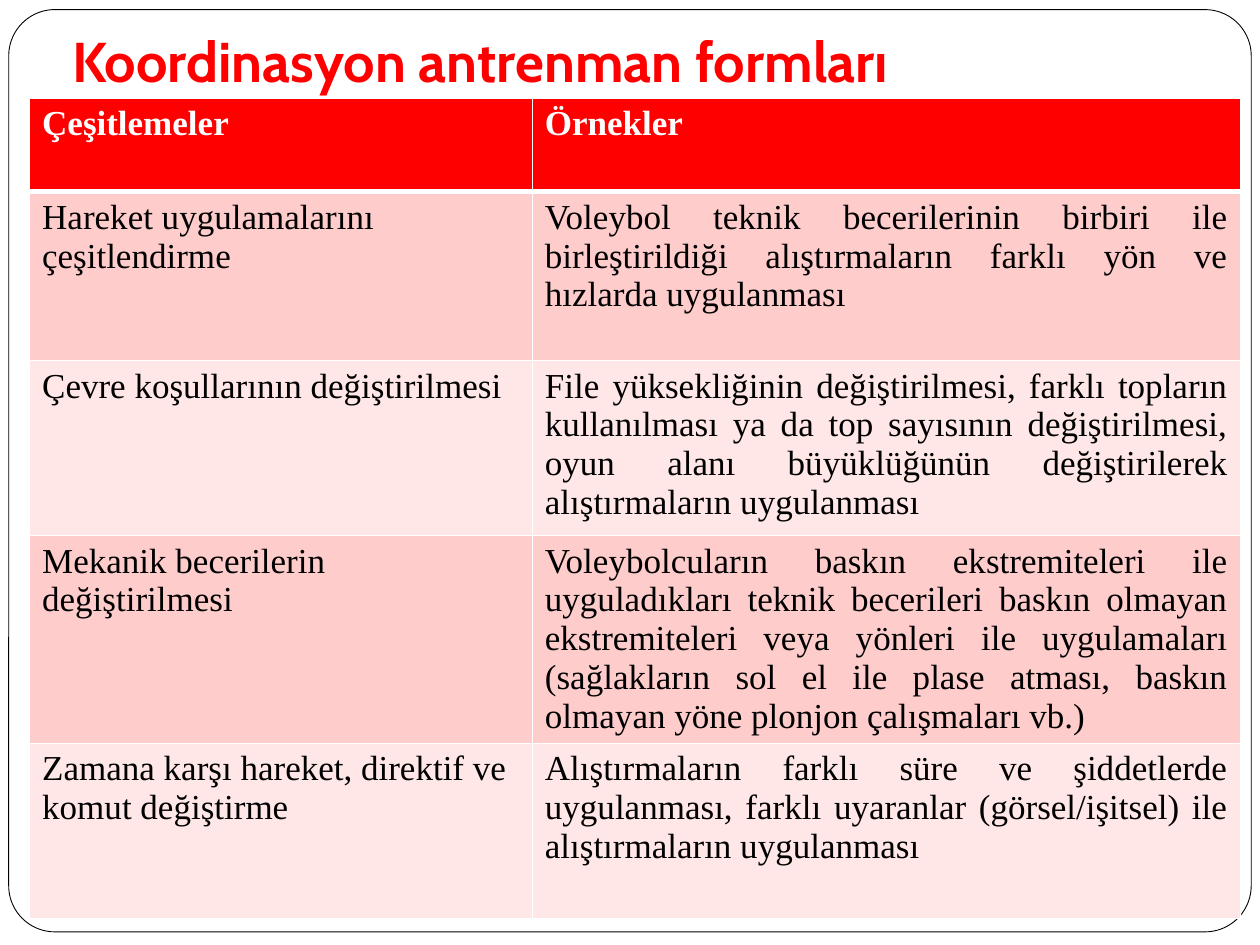
import pptx
import pptx.util
import pptx.dml.color
import pptx.enum.shapes
import pptx.enum.text
import pptx.oxml
import pptx.oxml.ns

Pt = pptx.util.Pt
Color = pptx.dml.color.RGBColor.from_string
ALIGN = pptx.enum.text.PP_ALIGN

THEME = {
    "red": "FF0000", "white": "FFFFFF", "black": "000000",
    "bands": ("FFCCCC", "FFE7E7"),
    "title_font": "Cabin", "title_size": 32,
    "body_font": "Times New Roman", "body_size": 20,
}

ROWS = [
    ("Çeşitlemeler", "Örnekler"),
    ("Hareket uygulamalarını çeşitlendirme",
     "Voleybol teknik becerilerinin birbiri ile birleştirildiği alıştırmaların "
     "farklı yön ve hızlarda uygulanması"),
    ("Çevre koşullarının değiştirilmesi",
     "File yüksekliğinin değiştirilmesi, farklı topların kullanılması ya da top "
     "sayısının değiştirilmesi, oyun alanı büyüklüğünün değiştirilerek "
     "alıştırmaların uygulanması"),
    ("Mekanik becerilerin değiştirilmesi",
     "Voleybolcuların baskın ekstremiteleri ile uyguladıkları teknik becerileri "
     "baskın olmayan ekstremiteleri veya yönleri ile uygulamaları (sağlakların "
     "sol el ile plase atması, baskın olmayan yöne plonjon çalışmaları vb.)"),
    ("Zamana karşı hareket, direktif ve komut değiştirme",
     "Alıştırmaların farklı süre ve şiddetlerde uygulanması, farklı uyaranlar "
     "(görsel/işitsel) ile alıştırmaların uygulanması"),
]
ROW_HEIGHTS = (53.3, 96.5, 100, 118.8, 100)
COLUMN_WIDTHS = (287.3, 404.6)


def add_run(paragraph, text, font, size, color, bold):
    run = paragraph.add_run()
    run.text = text
    run.font.name = font
    run.font.size = Pt(size)
    run.font.bold = bold
    run.font.color.rgb = Color(color)


def set_border(cell, side, width):
    line = pptx.oxml.parse_xml(
        f'<a:ln{side} {pptx.oxml.ns.nsdecls("a")} w="{Pt(width)}"><a:solidFill>'
        f'<a:srgbClr val="{THEME["white"]}"/></a:solidFill></a:ln{side}>')
    properties = cell._tc.get_or_add_tcPr()
    properties.insert("LRTB".index(side), line)


presentation = pptx.Presentation()
presentation.slide_width, presentation.slide_height = Pt(720), Pt(540)
slide = presentation.slides.add_slide(presentation.slide_layouts[5])

# Rounded frame, behind everything
frame = slide.shapes.add_shape(
    pptx.enum.shapes.MSO_SHAPE.ROUNDED_RECTANGLE, Pt(5), Pt(5.5), Pt(710), Pt(527))
frame.adjustments[0] = 0.05
frame.shadow.inherit = False
frame.fill.solid()
frame.fill.fore_color.rgb = Color(THEME["white"])
frame.line.color.rgb = Color(THEME["black"])
frame.line.width = Pt(0.5)
slide.shapes._spTree.insert(2, frame._element)

# Title
heading = slide.shapes.title
heading.left, heading.top, heading.width, heading.height = Pt(34), Pt(16.5), Pt(650), Pt(44.5)
heading_text = heading.text_frame
heading_text.word_wrap = True
heading_text.auto_size = pptx.enum.text.MSO_AUTO_SIZE.NONE
heading_text.vertical_anchor = pptx.enum.text.MSO_ANCHOR.BOTTOM
heading_text.margin_left = heading_text.margin_right = heading_text.margin_bottom = Pt(7.2)
heading_text.margin_top = Pt(3.6)
heading_text.paragraphs[0].alignment = ALIGN.LEFT
add_run(heading_text.paragraphs[0], "Koordinasyon antrenman formları",
        THEME["title_font"], THEME["title_size"], THEME["red"], True)

# Table of variations and examples
variations = slide.shapes.add_table(
    len(ROWS), len(COLUMN_WIDTHS), Pt(16.9), Pt(56.2),
    Pt(sum(COLUMN_WIDTHS)), Pt(sum(ROW_HEIGHTS))).table
for column, width in zip(variations.columns, COLUMN_WIDTHS):
    column.width = Pt(width)

for row, (texts, height) in enumerate(zip(ROWS, ROW_HEIGHTS)):
    variations.rows[row].height = Pt(height)
    header = row == 0
    for col, text in enumerate(texts):
        cell = variations.cell(row, col)
        cell.fill.solid()
        cell.fill.fore_color.rgb = Color(
            THEME["red"] if header else THEME["bands"][(row - 1) % 2])
        for side in "LRTB":
            thick = (header and side == "B") or (row == 1 and side == "T")
            set_border(cell, side, 3 if thick else 1)
        paragraph = cell.text_frame.paragraphs[0]
        paragraph.alignment = ALIGN.JUSTIFY if col == 1 and not header else ALIGN.LEFT
        add_run(paragraph, text, THEME["body_font"], THEME["body_size"],
                THEME["white"] if header else THEME["black"], header)

presentation.save("out.pptx")
